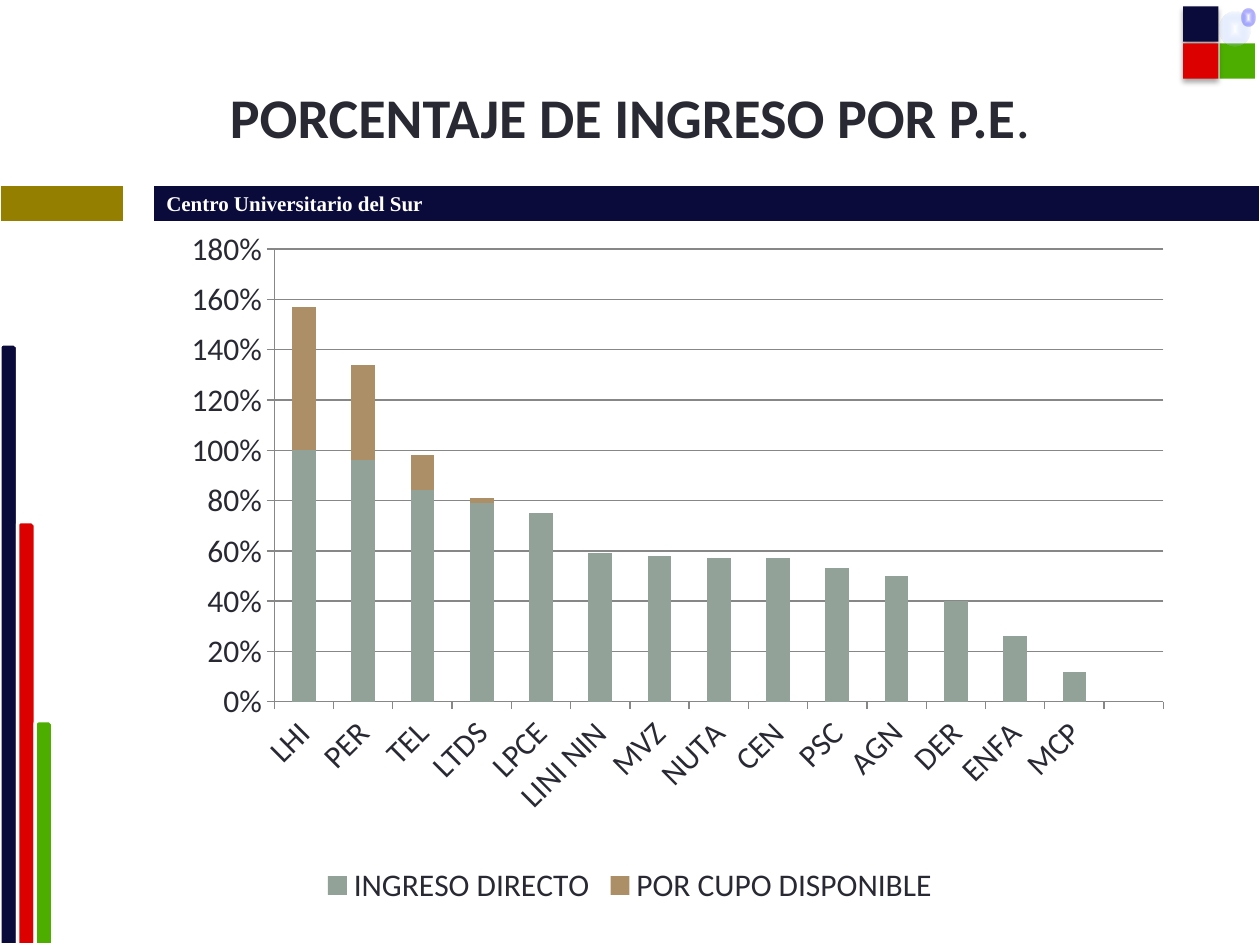
from dataclasses import dataclass

from lxml import etree
from pptx import Presentation
from pptx.chart.data import CategoryChartData
from pptx.dml.color import RGBColor
from pptx.enum.chart import XL_CHART_TYPE, XL_LEGEND_POSITION, XL_TICK_MARK
from pptx.enum.shapes import MSO_SHAPE
from pptx.enum.text import MSO_ANCHOR, PP_ALIGN
from pptx.oxml import parse_xml
from pptx.oxml.ns import nsdecls
from pptx.util import Inches, Pt

STACKED = XL_CHART_TYPE.COLUMN_STACKED
BOTTOM = XL_LEGEND_POSITION.BOTTOM
OUTSIDE = XL_TICK_MARK.OUTSIDE
RECT = MSO_SHAPE.RECTANGLE
OVAL = MSO_SHAPE.OVAL
SNIP = MSO_SHAPE.SNIP_ROUND_RECTANGLE
MIDDLE = MSO_ANCHOR.MIDDLE
CENTER = PP_ALIGN.CENTER


@dataclass(frozen=True)
class Theme:
    """Colours, fonts and type sizes of the slide."""
    navy: str = "0A0B3A"
    red: str = "DC0000"
    green: str = "4DAE00"
    olive: str = "947F00"
    white: str = "FFFFFF"
    ink: str = "292934"
    grid: str = "878787"
    sage: str = "93A299"
    tan: str = "AD8F67"
    sky: str = "A8C1FA"
    blue: str = "0000FF"
    sans: str = "Calibri"
    serif: str = "Times New Roman"
    title: int = 32
    label: int = 18
    band: int = 12


def rgb(code):
    """Turn a hex code into a colour."""
    return RGBColor.from_string(code)


class Board:
    """Draws on one slide, on a grid of 100 columns by 75 rows."""

    def __init__(self, deck, theme):
        """Add a blank slide and work out the grid."""
        self.theme = theme
        self.slide = deck.slides.add_slide(deck.slide_layouts[6])
        self.col = deck.slide_width / 100
        self.row = deck.slide_height / 75

    def place(self, x, y, w, h):
        """Turn columns and rows into lengths."""
        return (round(x * self.col), round(y * self.row),
                round(w * self.col), round(h * self.row))

    def style(self, font, face, size, color, bold=False):
        """Set the look of a font."""
        font.name, font.size, font.bold = face, Pt(size), bold
        font.color.rgb = rgb(color)

    def shape(self, kind, box, color, edge=None):
        """Add a filled shape with an optional outline."""
        item = self.slide.shapes.add_shape(kind, *self.place(*box))
        item.shadow.inherit = False
        item.fill.solid()
        item.fill.fore_color.rgb = rgb(color)
        if edge:
            item.line.color.rgb = rgb(edge)
            item.line.width = Pt(2)
        else:
            item.line.fill.background()
        return item

    def tile(self, box, color, cast):
        """Add a square, with a soft shadow if cast."""
        item = self.shape(RECT, box, color)
        if cast:
            item._element.spPr.find("{*}effectLst").append(parse_xml(
                f'<a:outerShdw {nsdecls("a")} blurRad="39370" dist="22860"'
                ' dir="5400000" rotWithShape="0"><a:srgbClr val="000000">'
                '<a:alpha val="35000"/></a:srgbClr></a:outerShdw>'))

    def glow(self, box, color, alpha):
        """Add an oval that shades from a white core to a clear tint."""
        item = self.shape(OVAL, box, color)
        fill = item._element.spPr.find("{*}solidFill")
        fill.getparent().replace(fill, parse_xml(
            f'<a:gradFill {nsdecls("a")} rotWithShape="1"><a:gsLst>'
            f'<a:gs pos="0"><a:srgbClr val="{self.theme.white}"/></a:gs>'
            f'<a:gs pos="100000"><a:srgbClr val="{color}">'
            f'<a:alpha val="{alpha * 1000}"/></a:srgbClr></a:gs></a:gsLst>'
            '<a:path path="shape"><a:fillToRect l="50000" t="50000"'
            ' r="50000" b="50000"/></a:path></a:gradFill>'))

    def title(self, box, parts):
        """Add a centred title from pairs of text and weight."""
        frame = self.slide.shapes.add_textbox(*self.place(*box)).text_frame
        frame.word_wrap = True
        frame.vertical_anchor = MIDDLE
        line = frame.paragraphs[0]
        line.alignment = CENTER
        for text, bold in parts:
            run = line.add_run()
            run.text = text
            self.style(run.font, self.theme.sans, self.theme.title,
                       self.theme.ink, bold)

    def band(self, box, cells):
        """Add a one-row table from width, text and fill."""
        look = self.theme
        frame = self.slide.shapes.add_table(1, len(cells), *self.place(*box))
        table = frame.table
        table.first_row = table.horz_banding = False
        for spot, (wide, text, color) in enumerate(cells):
            table.columns[spot].width = round(wide * self.col)
            cell = table.cell(0, spot)
            cell.vertical_anchor = MIDDLE
            cell.text_frame.text = text
            self.style(cell.text_frame.paragraphs[0].font, look.serif,
                       look.band, look.white, True)
            for side, width in (("L", 1), ("R", 1), ("T", 1), ("B", 3)):
                cell._tc.get_or_add_tcPr().append(parse_xml(
                    f'<a:ln{side} {nsdecls("a")} w="{Pt(width)}"><a:solidFill>'
                    f'<a:srgbClr val="{look.white}"/></a:solidFill></a:ln{side}>'))
            if color:
                cell.fill.solid()
                cell.fill.fore_color.rgb = rgb(color)
            else:
                cell.fill.background()

    def chart(self, box, names, series, plot):
        """Add a stacked column chart from name, values and colour."""
        look = self.theme
        data = CategoryChartData(number_format="0%")
        data.categories = names
        for name, values, _ in series:
            data.add_series(name, values)
        chart = self.slide.shapes.add_chart(
            STACKED, *self.place(*box), data).chart
        self.style(chart.font, look.sans, look.label, look.ink)
        chart.has_title = False
        chart.has_legend = True
        chart.legend.position = BOTTOM
        chart.legend.include_in_layout = False
        bars = chart.plots[0]
        bars.gap_width, bars.overlap = 150, 100
        bars.vary_by_categories = False
        for item, (_, _, color) in zip(bars.series, series):
            item.format.fill.solid()
            item.format.fill.fore_color.rgb = rgb(color)
        across, up = chart.category_axis, chart.value_axis
        up.has_major_gridlines = True
        up.minimum_scale, up.maximum_scale, up.major_unit = 0, 1.8, 0.2
        up.tick_labels.number_format = "0%"
        up.tick_labels.number_format_is_linked = False
        for axis in (across, up):
            axis.major_tick_mark = OUTSIDE
            self.style(axis.tick_labels.font, look.sans, look.label, look.ink)
        for part in (across, up, up.major_gridlines):
            part.format.line.color.rgb = rgb(look.grid)
            part.format.line.width = Pt(0.75)
        across._element.txPr.bodyPr.set("rot", "-2700000")
        area = chart._chartSpace.chart.plotArea
        for old in area.findall("{*}layout"):
            area.remove(old)
        layout = parse_xml(f'<c:layout {nsdecls("c")}><c:manualLayout/></c:layout>')
        marks = {"layoutTarget": "inner", "xMode": "edge", "yMode": "edge",
                 **dict(zip("xywh", plot))}
        for tag, value in marks.items():
            etree.SubElement(layout[0], f"{{{layout.nsmap['c']}}}{tag}",
                             val=str(value))
        area.insert(0, layout)


def main():
    """Build the slide and save it."""
    deck = Presentation()
    deck.slide_width, deck.slide_height = Inches(10), Inches(7.5)
    look = Theme()
    board = Board(deck, look)
    board.band((0, 14.7, 100, 3), [
        (9.8, "", look.olive), (2.4, "", None),
        (87.8, "Centro Universitario del Sur", look.navy)])
    stripes = [(27.3, look.navy), (41.4, look.red), (57.2, look.green)]
    for spot, (top, color) in enumerate(stripes):
        board.shape(SNIP, (spot * 1.4, top, 1.4, 75 - top), color, look.white)
    tiles = [(1, 1, look.green, False), (0, 0, look.navy, True),
             (0, 1, look.red, True)]
    for across, down, color, cast in tiles:
        board.tile((93.9 + 2.9 * across, 0.5 + 2.95 * down, 2.8, 2.8),
                   color, cast)
    board.glow((96.8, 0.9, 2.4, 2.8), look.sky, 10)
    board.glow((98.5, 0.7, 1.1, 1.4), look.blue, 20)
    board.title((5, 3, 90, 12.5),
                [("PORCENTAJE DE INGRESO POR P.E", True), (".", False)])
    names = ["LHI", "PER", "TEL", "LTDS", "LPCE", "LINI NIN", "MVZ", "NUTA",
             "CEN", "PSC", "AGN", "DER", "ENFA", "MCP", ""]
    direct = [1, 0.96, 0.84, 0.79, 0.75, 0.59, 0.58, 0.57, 0.57, 0.53, 0.5,
              0.4, 0.26, 0.12, None]
    spare = [0.57, 0.38, 0.14, 0.02] + [0] * 10 + [None]
    board.chart((5.9, 17, 88.2, 55.3), names,
                [("INGRESO DIRECTO", direct, look.sage),
                 ("POR CUPO DISPONIBLE", spare, look.tan)],
                (0.18, 0.05, 0.8, 0.65))
    deck.save("out.pptx")


if __name__ == "__main__":
    main()
